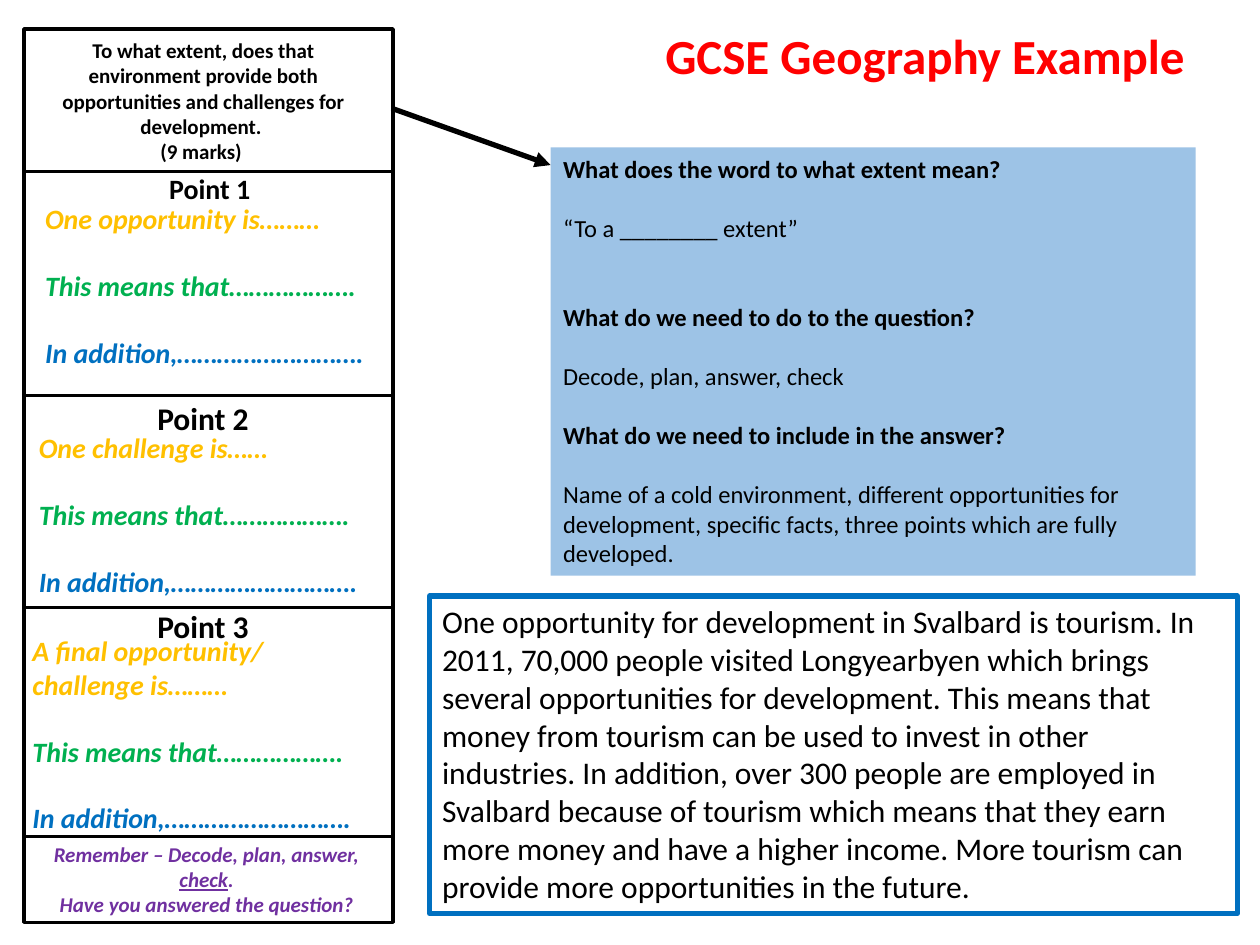
from lxml import etree
from pptx import Presentation
from pptx.dml.color import RGBColor
from pptx.enum.shapes import MSO_CONNECTOR, MSO_SHAPE
from pptx.enum.text import MSO_ANCHOR, MSO_AUTO_SIZE, PP_ALIGN
from pptx.oxml.ns import qn
from pptx.util import Inches, Pt

STRAIGHT, RECTANGLE = MSO_CONNECTOR.STRAIGHT, MSO_SHAPE.RECTANGLE
TOP, GROW = MSO_ANCHOR.TOP, MSO_AUTO_SIZE.SHAPE_TO_FIT_TEXT
LEFT, CENTER = PP_ALIGN.LEFT, PP_ALIGN.CENTER

THEME = {
    "font": "Calibri",
    "black": RGBColor(0x00, 0x00, 0x00),
    "red": RGBColor(0xFF, 0x00, 0x00),
    "gold": RGBColor(0xFF, 0xC0, 0x00),
    "green": RGBColor(0x00, 0xB0, 0x50),
    "blue": RGBColor(0x00, 0x70, 0xC0),
    "purple": RGBColor(0x70, 0x30, 0xA0),
    "panel": RGBColor(0x9D, 0xC3, 0xE6),
    "title": 28, "body": 18, "prompt": 16, "panel text": 14, "small": 12,
}


def write(box, paragraphs, size, align=LEFT, wrap=True):
    """Fill a box; each paragraph is (space before, spans), each span (text, format)."""
    frame = box.text_frame
    frame.word_wrap, frame.auto_size, frame.vertical_anchor = wrap, GROW, TOP
    for index, (space, spans) in enumerate(paragraphs):
        para = frame.add_paragraph() if index else frame.paragraphs[0]
        para.alignment, para.space_before = align, Pt(space)
        for text, styles in spans:
            span = para.add_run()
            span.text = text
            span.font.name, span.font.size = THEME["font"], Pt(THEME[size])
            span.font.color.rgb = THEME[styles.get("color", "black")]
            for name, value in styles.items():
                if name != "color":
                    setattr(span.font, name, value)


def draw_line(start_x, start_y, end_x, end_y, width):
    line = slide.shapes.add_connector(
        STRAIGHT, *map(Inches, (start_x, start_y, end_x, end_y)))
    line.line.color.rgb, line.line.width = THEME["black"], Pt(width)
    etree.SubElement(line._element.spPr, qn("a:effectLst"))
    return line


deck = Presentation()
deck.slide_width, deck.slide_height = Inches(10), Inches(7.5)
slide = deck.slides.add_slide(deck.slide_layouts[5])
bold = {"bold": True}

title = slide.shapes.title
title.left, title.top, title.width, title.height = map(Inches, (5.18, 0.15, 4.55, 0.57))
write(title, [(0, [("GCSE Geography Example", {"bold": True, "color": "red"})])], "title")

# Planning column: a frame split into five rows
column_left, column_top, column_width, column_height = 0.19, 0.23, 2.93, 7.09
frame_box = slide.shapes.add_shape(RECTANGLE, *map(
    Inches, (column_left, column_top, column_width, column_height)))
frame_box.shadow.inherit = False
frame_box.fill.background()
frame_box.line.color.rgb, frame_box.line.width = THEME["black"], Pt(2)
for divider in (1.36, 3.14, 4.82, 6.64):
    draw_line(column_left, divider, column_left + column_width, divider, 1.75)

question = slide.shapes.add_textbox(*map(Inches, (0.21, 0.25, 2.81, 1.11)))
write(question, [
    (0, [("To what extent, does that environment provide both opportunities "
          "and challenges for development. ", bold)]),
    (0, [("(9 marks) ", bold)]),
], "small", CENTER)

headings = [
    ("Point 1 ", (1.24, 1.31, 0.9, 0.37), "prompt", CENTER),
    ("Point 2", (1.15, 3.12, 0.94, 0.4), "body", LEFT),
    ("Point 3", (1.15, 4.77, 0.94, 0.4), "body", LEFT),
]
for text, place, size, align in headings:
    heading = slide.shapes.add_textbox(*map(Inches, place))
    write(heading, [(0, [(text, bold)])], size, align, wrap=False)

openers = [
    ("One opportunity is………", 0.26, 1.55, 1.45),
    ("One challenge is……", 0.21, 3.37, 1.45),
    ("A final opportunity/ challenge is………", 0.16, 4.98, 1.72),
]
for opener, left, top, height in openers:
    prompts = slide.shapes.add_textbox(*map(Inches, (left, top, 2.86, height)))
    lines = [(opener, "gold"), ("This means that……………….", "green"),
             ("In addition,……………………….", "blue")]
    write(prompts, [
        (19 if index else 0, [(text, {"bold": True, "italic": True, "color": color})])
        for index, (text, color) in enumerate(lines)
    ], "prompt")

reminder = slide.shapes.add_textbox(*map(Inches, (0.26, 6.63, 2.76, 0.71)))
purple = {"bold": True, "italic": True, "color": "purple"}
write(reminder, [
    (0, [("Remember – Decode, plan, answer, ", purple),
         ("check", {**purple, "underline": True}), (".", purple)]),
    (0, [("Have you answered the question?", purple)]),
], "small", CENTER)

# Arrow from the exam question to its explanation
arrow = draw_line(3.11, 0.86, 4.37, 1.31, 3)
etree.SubElement(arrow.line._get_or_add_ln(), qn("a:tailEnd"), type="triangle")

panel = slide.shapes.add_textbox(*map(Inches, (4.37, 1.17, 5.12, 3.4)))
panel.fill.solid()
panel.fill.fore_color.rgb = THEME["panel"]
write(panel, [
    (0, [("What does the word to what extent mean?", bold)]),
    (17, [("“To a ________ extent”", {})]),
    (34, [("What do we need to do to the question?", bold)]),
    (17, [("Decode, plan, answer, check", {})]),
    (17, [("What do we need to include in the answer?", bold)]),
    (17, [("Name of a cold environment, different opportunities for development, "
           "specific facts, three points which are fully developed.", {})]),
], "panel text")

answer = slide.shapes.add_textbox(*map(Inches, (3.41, 4.73, 6.41, 2.52)))
answer.line.color.rgb, answer.line.width = THEME["blue"], Pt(3)
write(answer, [(0, [(
    "One opportunity for development in Svalbard is tourism. In 2011, 70,000 people "
    "visited Longyearbyen which brings several opportunities for development. This "
    "means that money from tourism can be used to invest in other industries. In "
    "addition, over 300 people are employed in Svalbard because of tourism which "
    "means that they earn more money and have a higher income. More tourism can "
    "provide more opportunities in the future.", {})])], "body")

deck.save("out.pptx")
